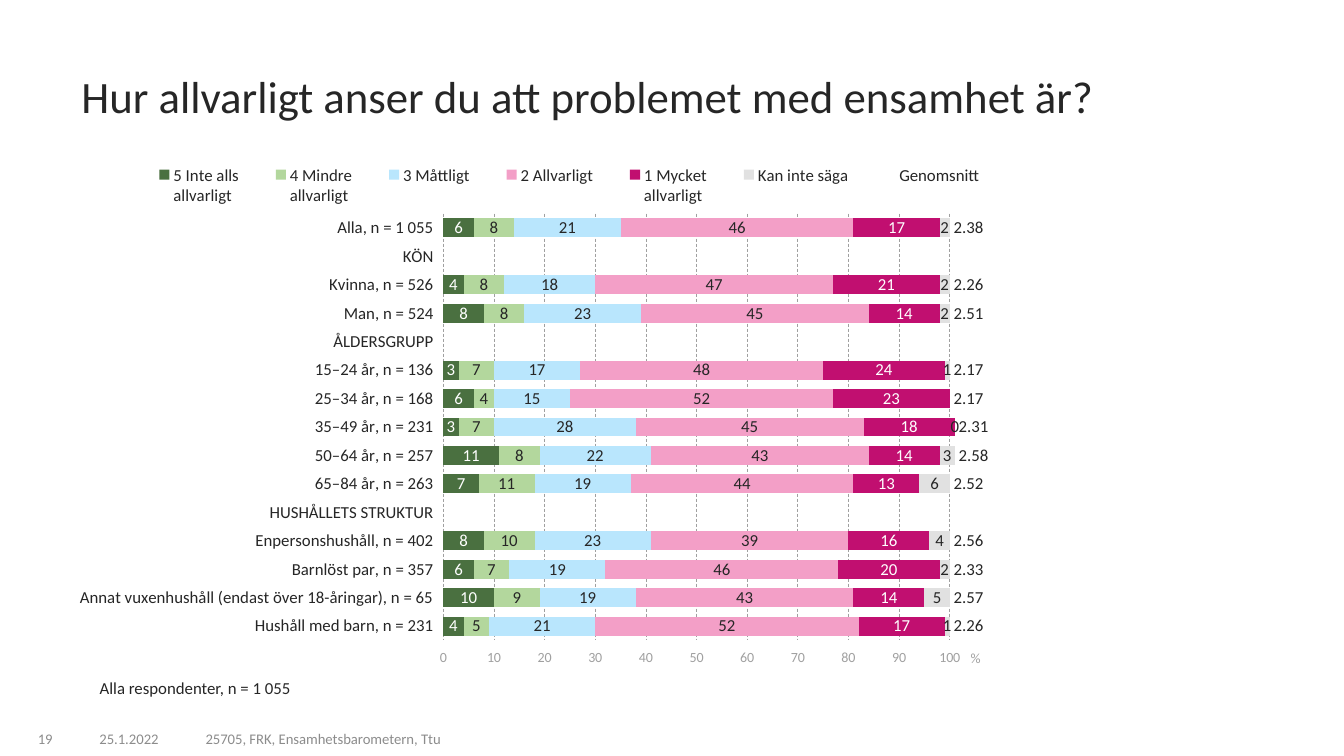
import lxml.etree
import pptx
import pptx.chart.data
import pptx.dml.color
import pptx.enum.chart
import pptx.enum.dml
import pptx.enum.text
import pptx.oxml
import pptx.oxml.ns
import pptx.util

PX = 9144  # EMU, 100 px to the inch
FONT = "Calibri"
RGBColor = pptx.dml.color.RGBColor
INK = RGBColor(0x26, 0x26, 0x26)
WHITE = RGBColor(0xFF, 0xFF, 0xFF)
FOOTER_GREY = RGBColor(0x8C, 0x8C, 0x8C)
AXIS_GREY = RGBColor(0xA0, 0xA0, 0xA0)
DARK_GREEN = RGBColor(0x4A, 0x70, 0x40)
LIGHT_GREEN = RGBColor(0xB3, 0xD7, 0x9D)
LIGHT_BLUE = RGBColor(0xB9, 0xE6, 0xFD)
PINK = RGBColor(0xF3, 0x9F, 0xC7)
MAGENTA = RGBColor(0xC1, 0x0F, 0x70)
PALE_GREY = RGBColor(0xE1, 0xE1, 0xE1)

# Series name, fill, label colour
ANSWERS = [
    ("5 Inte alls\nallvarligt", DARK_GREEN, WHITE),
    ("4 Mindre\nallvarligt", LIGHT_GREEN, INK),
    ("3 Måttligt", LIGHT_BLUE, INK),
    ("2 Allvarligt", PINK, INK),
    ("1 Mycket\nallvarligt", MAGENTA, WHITE),
    ("Kan inte säga", PALE_GREY, INK),
    ("Genomsnitt", None, INK),
]
HEADING = (None,) * len(ANSWERS)
# Respondent group, then one value for each of ANSWERS
GROUPS = [
    ("Alla, n = 1 055", (6, 8, 21, 46, 17, 2, 2.38)),
    ("KÖN", HEADING),
    ("Kvinna, n = 526", (4, 8, 18, 47, 21, 2, 2.26)),
    ("Man, n = 524", (8, 8, 23, 45, 14, 2, 2.51)),
    ("ÅLDERSGRUPP", HEADING),
    ("15–24 år, n = 136", (3, 7, 17, 48, 24, 1, 2.17)),
    ("25–34 år, n = 168", (6, 4, 15, 52, 23, None, 2.17)),
    ("35–49 år, n = 231", (3, 7, 28, 45, 18, 0, 2.31)),
    ("50–64 år, n = 257", (11, 8, 22, 43, 14, 3, 2.58)),
    ("65–84 år, n = 263", (7, 11, 19, 44, 13, 6, 2.52)),
    ("HUSHÅLLETS STRUKTUR", HEADING),
    ("Enpersonshushåll, n = 402", (8, 10, 23, 39, 16, 4, 2.56)),
    ("Barnlöst par, n = 357", (6, 7, 19, 46, 20, 2, 2.33)),
    ("Annat vuxenhushåll (endast över 18-åringar), n = 65", (10, 9, 19, 43, 14, 5, 2.57)),
    ("Hushåll med barn, n = 231", (4, 5, 21, 52, 17, 1, 2.26)),
]
# Rounded answers add up to 101 in two groups; the averages start after them
SCALE_END = 101.01


def px(*lengths):
    return [pptx.util.Emu(length * PX) for length in lengths]


def style_font(font, size, color):
    font.name = FONT
    font.size = pptx.util.Pt(size)
    font.bold = False
    font.color.rgb = color


def add_text(slide, box, text, size, color, anchor, align="LEFT", spacing=1.0):
    frame = slide.shapes.add_textbox(*px(*box)).text_frame
    frame.word_wrap = True
    frame.vertical_anchor = anchor
    paragraph = frame.paragraphs[0]
    paragraph.alignment = getattr(pptx.enum.text.PP_ALIGN, align)
    paragraph.line_spacing = spacing
    run = paragraph.add_run()
    run.text = text
    style_font(run.font, size, color)


def place(element, successors, x, y, w=None, h=None, inner=False):
    """Give a chart part a manual layout in fractions of the chart."""
    for old in element.findall(pptx.oxml.ns.qn("c:layout")):
        element.remove(old)
    layout = lxml.etree.Element(pptx.oxml.ns.qn("c:layout"))
    manual = lxml.etree.SubElement(layout, pptx.oxml.ns.qn("c:manualLayout"))
    settings = [("layoutTarget", "inner")] if inner else []
    settings += [("xMode", "edge"), ("yMode", "edge"), ("x", x), ("y", y)]
    if w is not None:
        settings += [("w", w), ("h", h)]
    for tag, value in settings:
        lxml.etree.SubElement(manual, pptx.oxml.ns.qn("c:" + tag), val=str(value))
    element.insert_element_before(layout, *successors)


def style_series(series, fill, label_color):
    series.invert_if_negative = False
    series.format.line.fill.background()
    labels = series.data_labels
    labels.show_value = True
    labels.number_format_is_linked = False
    style_font(labels.font, 12, label_color)
    if fill is None:
        series.format.fill.background()
        labels.number_format = "#,##0.00"
        labels.position = pptx.enum.chart.XL_LABEL_POSITION.INSIDE_BASE
    else:
        series.format.fill.solid()
        series.format.fill.fore_color.rgb = fill
        labels.number_format = "#,##0"


def style_axes(chart):
    groups, percent = chart.category_axis, chart.value_axis
    groups.reverse_order = True
    groups.tick_label_position = pptx.enum.chart.XL_TICK_LABEL_POSITION.LOW
    percent.tick_label_position = pptx.enum.chart.XL_TICK_LABEL_POSITION.HIGH
    percent.minimum_scale, percent.maximum_scale, percent.major_unit = 0, SCALE_END, 10
    percent.tick_labels.number_format = "General"
    percent.tick_labels.number_format_is_linked = False
    for axis, size, color in ((groups, 12, INK), (percent, 10, AXIS_GREY)):
        axis.major_tick_mark = axis.minor_tick_mark = pptx.enum.chart.XL_TICK_MARK.NONE
        axis.format.line.fill.background()
        style_font(axis.tick_labels.font, size, color)

    percent.has_major_gridlines = True
    grid = percent.major_gridlines.format.line
    grid.color.rgb = AXIS_GREY
    grid.width = pptx.util.Pt(0.5)
    grid.dash_style = pptx.enum.dml.MSO_LINE.DASH

    unit = percent.axis_title
    run = unit.text_frame.paragraphs[0].add_run()
    run.text = "%"
    style_font(run.font, 10, AXIS_GREY)
    body = unit.text_frame._txBody.find(pptx.oxml.ns.qn("a:bodyPr"))
    body.set("rot", "0")
    place(unit._element, ("c:overlay", "c:spPr", "c:txPr"), 0.95, 0.946)


def add_answer_chart(slide, box):
    data = pptx.chart.data.CategoryChartData()
    data.categories = [group for group, _ in GROUPS]
    columns = zip(*(values for _, values in GROUPS))
    for (name, _, _), column in zip(ANSWERS, columns):
        data.add_series(name, column)
    kind = pptx.enum.chart.XL_CHART_TYPE.BAR_STACKED
    chart = slide.shapes.add_chart(kind, *px(*box), data).chart
    chart.has_title = False
    style_font(chart.font, 12, INK)

    plot = chart.plots[0]
    plot.gap_width, plot.overlap, plot.vary_by_categories = 50, 100, False
    for series, (_, fill, label_color) in zip(plot.series, ANSWERS):
        style_series(series, fill, label_color)
    style_axes(chart)
    area = chart._chartSpace.chart.plotArea
    place(area, ("c:barChart",), 0.394, 0.126, 0.542, 0.808, inner=True)

    chart.has_legend = True
    legend = chart.legend
    legend.position = pptx.enum.chart.XL_LEGEND_POSITION.TOP
    legend.include_in_layout = False
    style_font(legend.font, 12, INK)
    place(legend._element, ("c:overlay", "c:spPr", "c:txPr"), 0.06, 0.024, 0.935, 0.1)


def main():
    deck = pptx.Presentation()
    deck.slide_width, deck.slide_height = px(1333, 750)
    slide = deck.slides.add_slide(deck.slide_layouts[6])
    anchors = pptx.enum.text.MSO_ANCHOR

    question = "Hur allvarligt anser du att problemet med ensamhet är?"
    add_text(slide, (71, 64, 1207, 68), question, 32, INK, anchors.MIDDLE, spacing=0.9)
    add_answer_chart(slide, (71, 146, 936, 524))
    base = "Alla respondenter, n = 1 055"
    add_text(slide, (89, 670, 918, 28), base, 12, INK, anchors.TOP, spacing=0.9)

    for left, width, text, align in (
        (3, 59, "19", "RIGHT"),
        (66, 124, "25.1.2022", "CENTER"),
        (194, 592, "25705, FRK, Ensamhetsbarometern, Ttu", "LEFT"),
    ):
        add_text(slide, (left, 716, width, 30), text, 10.5, FOOTER_GREY, anchors.BOTTOM, align)
    deck.save("out.pptx")


if __name__ == "__main__":
    main()
